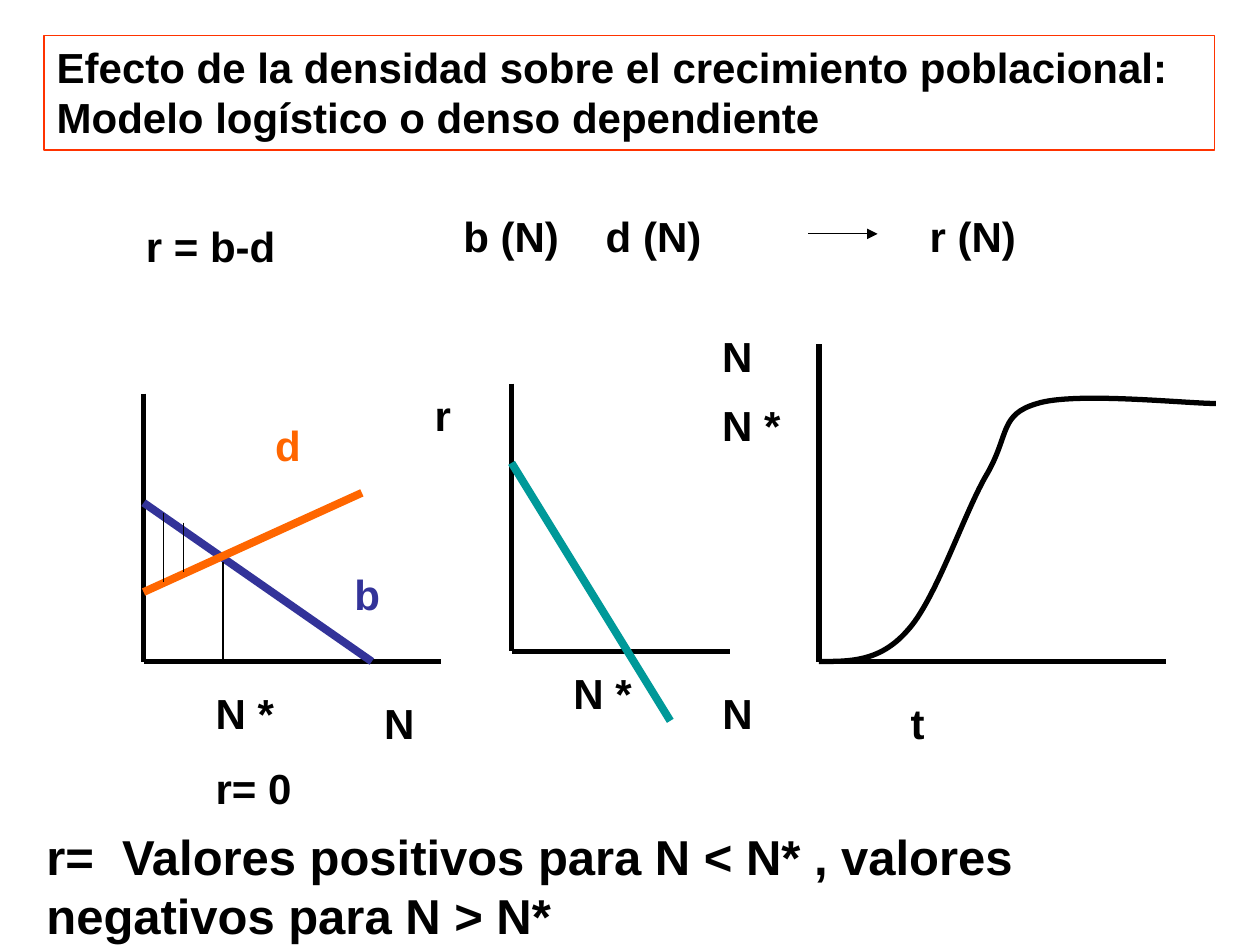
from dataclasses import dataclass

from lxml import etree
from pptx import Presentation
from pptx.dml.color import RGBColor
from pptx.enum.shapes import MSO_CONNECTOR, MSO_SHAPE
from pptx.enum.text import MSO_ANCHOR, MSO_AUTO_SIZE, PP_ALIGN
from pptx.oxml.ns import qn
from pptx.util import Cm, Inches, Pt

STRAIGHT = MSO_CONNECTOR.STRAIGHT
RECTANGLE = MSO_SHAPE.RECTANGLE
TITLE_ONLY = 5


@dataclass(frozen=True)
class Theme:
    font: str = "Arial"
    ink: str = "000000"
    paper: str = "FFFFFF"
    frame: str = "FF3300"
    birth: str = "333399"
    death: str = "FF6600"
    growth: str = "009999"
    body: int = 24
    conclusion: int = 28
    thin: float = 0.75
    axis: float = 3
    trend: float = 4.5


THEME = Theme()
CELL = Cm(0.2)
LABEL_HEIGHT = Inches(0.5)

TITLE = ("Efecto de la densidad sobre el crecimiento poblacional: "
         "Modelo logístico o denso dependiente")
TITLE_BOX = (0.35, 0.28, 9.29, 0.91)
CONCLUSION = "r=\tValores positivos para N < N* , valores negativos para N > N*"
CONCLUSION_BOX = (0.27, 6.51, 9.61, 1.03)
CONCLUSION_TAB = 0.6
FORMULA_TAB = 1.13

# Each panel has its origin in inches; all else is in grid cells, right and up
# from there. axes: (width, height); lines: (from, to, colour, weight);
# labels: (paragraphs, column, row of the top edge, width, colour).
PANELS = [
    {"origin": (1.06, 1.62), "axes": None,
     "lines": [],
     "arrows": [((68, -3), (75, -3))],
     "labels": [(["r = b-d"], 0, -1, 24, THEME.ink),
                (["b (N)\td (N)"], 32, 0, 33, THEME.ink),
                (["r (N)"], 79, 0, 13, THEME.ink)]},
    {"origin": (1.14, 5.25), "axes": (30, 27),
     "lines": [((0, 16), (23, 0), THEME.birth, THEME.trend),
               ((0, 7), (22, 17), THEME.death, THEME.trend),
               ((8, 10), (8, 9), THEME.ink, THEME.thin),
               ((8, 10), (8, 0), THEME.ink, THEME.thin),
               ((2, 15), (2, 8), THEME.ink, THEME.thin),
               ((4, 14), (4, 9), THEME.ink, THEME.thin)],
     "labels": [(["b"], 20, 10, 8, THEME.birth),
                (["d"], 12, 25, 7, THEME.death),
                (["N"], 23, -3, 10, THEME.ink),
                (["N *", "r= 0"], 6, -2, 11, THEME.ink)]},
    {"origin": (6.5, 5.25), "axes": (35, 32),
     "lines": [],
     "curve": [(0, 0),
               (3, 0), (6.1, -0.1), (8.9, 3.1),
               (11.8, 6.2), (14.7, 15.2), (17, 19),
               (19.2, 22.9), (18.2, 24.9), (22, 26),
               (25.8, 27.2), (37, 26), (40, 26)],
     "labels": [(["t"], 8, -3, 6, THEME.ink),
                (["N *"], -11, 27, 11, THEME.ink),
                (["N"], -11, 34, 10, THEME.ink)]},
    {"origin": (4.06, 5.17), "axes": (22, 27),
     "lines": [((0, 19), (16, -7), THEME.growth, THEME.trend)],
     "labels": [(["r"], -9, 27, 6, THEME.ink),
                (["N"], 20, -3, 8, THEME.ink),
                (["N *"], 5, -1, 11, THEME.ink)]},
]


def rgb(code):
    return RGBColor.from_string(code)


def place(shape, box):
    for side, inches in zip(("left", "top", "width", "height"), box):
        setattr(shape, side, Inches(inches))


def write(shape, paragraphs, colour=THEME.ink, size=THEME.body, tab=None):
    frame = shape.text_frame
    frame.text = "\n".join(paragraphs)
    frame_format = {"word_wrap": True, "vertical_anchor": MSO_ANCHOR.TOP,
                    "auto_size": MSO_AUTO_SIZE.SHAPE_TO_FIT_TEXT}
    for name, value in frame_format.items():
        setattr(frame, name, value)
    for number, paragraph in enumerate(frame.paragraphs):
        paragraph.alignment = PP_ALIGN.LEFT
        paragraph.line_spacing = 1.0
        paragraph.space_before = Pt(size * 0.58 if number else 0)
        if tab:
            stops = etree.SubElement(paragraph._p.get_or_add_pPr(), qn("a:tabLst"))
            etree.SubElement(stops, qn("a:tab"), pos=str(Inches(tab)), algn="l")
        for run in paragraph.runs:
            for name, value in {"name": THEME.font, "size": Pt(size), "bold": True}.items():
                setattr(run.font, name, value)
            run.font.color.rgb = rgb(colour)


def stroke(line, colour, weight):
    line.color.rgb = rgb(colour)
    line.width = Pt(weight)


def draw_line(slide, start, end, colour, weight, arrow=False):
    connector = slide.shapes.add_connector(STRAIGHT, *start, *end)
    stroke(connector.line, colour, weight)
    if arrow:
        etree.SubElement(connector.line._get_or_add_ln(), qn("a:tailEnd"), type="triangle")
    etree.SubElement(connector._element.spPr, qn("a:effectLst"))


def draw_curve(slide, points):
    """Draw a Bézier chain: a start, then two controls and an end per piece."""
    builder = slide.shapes.build_freeform(*points[0])
    builder.add_line_segments(points[1:], close=False)
    curve = builder.convert_to_shape()
    curve.shadow.inherit = False
    curve.fill.background()
    stroke(curve.line, THEME.ink, THEME.axis)
    outline = next(curve._element.iter(qn("a:path")))
    segments = outline.findall(qn("a:lnTo"))
    for first in range(0, len(segments), 3):
        piece = etree.SubElement(outline, qn("a:cubicBezTo"))
        for segment in segments[first:first + 3]:
            piece.append(segment[0])
            outline.remove(segment)


def draw_panel(slide, panel):
    left, base = (Inches(value) for value in panel["origin"])

    def at(point):
        return int(left + point[0] * CELL), int(base - point[1] * CELL)

    lines = list(panel["lines"])
    if panel["axes"]:
        width, height = panel["axes"]
        lines = [((0, height), (0, 0), THEME.ink, THEME.axis),
                 ((0, 0), (width, 0), THEME.ink, THEME.axis)] + lines
    for start, end, colour, weight in lines:
        draw_line(slide, at(start), at(end), colour, weight)
    for start, end in panel.get("arrows", []):
        draw_line(slide, at(start), at(end), THEME.ink, THEME.thin, arrow=True)
    if "curve" in panel:
        draw_curve(slide, [at(point) for point in panel["curve"]])
    for paragraphs, column, row, width, colour in panel["labels"]:
        height = LABEL_HEIGHT if len(paragraphs) == 1 else Inches(1.1)
        label = slide.shapes.add_textbox(*at((column, row)), width * CELL, height)
        tab = FORMULA_TAB if "\t" in paragraphs[0] else None
        write(label, paragraphs, colour, tab=tab)


def main():
    deck = Presentation()
    deck.slide_width, deck.slide_height = Inches(10), Inches(7.5)
    slide = deck.slides.add_slide(deck.slide_layouts[TITLE_ONLY])

    title = slide.shapes.title
    place(title, TITLE_BOX)
    title.fill.solid()
    title.fill.fore_color.rgb = rgb(THEME.paper)
    stroke(title.line, THEME.frame, THEME.thin)
    write(title, [TITLE])

    for panel in PANELS:
        draw_panel(slide, panel)

    conclusion = slide.shapes.add_shape(RECTANGLE, *map(Inches, CONCLUSION_BOX))
    conclusion.shadow.inherit = False
    conclusion.fill.solid()
    conclusion.fill.fore_color.rgb = rgb(THEME.paper)
    conclusion.line.fill.background()
    write(conclusion, [CONCLUSION], size=THEME.conclusion, tab=CONCLUSION_TAB)

    deck.save("out.pptx")


if __name__ == "__main__":
    main()
